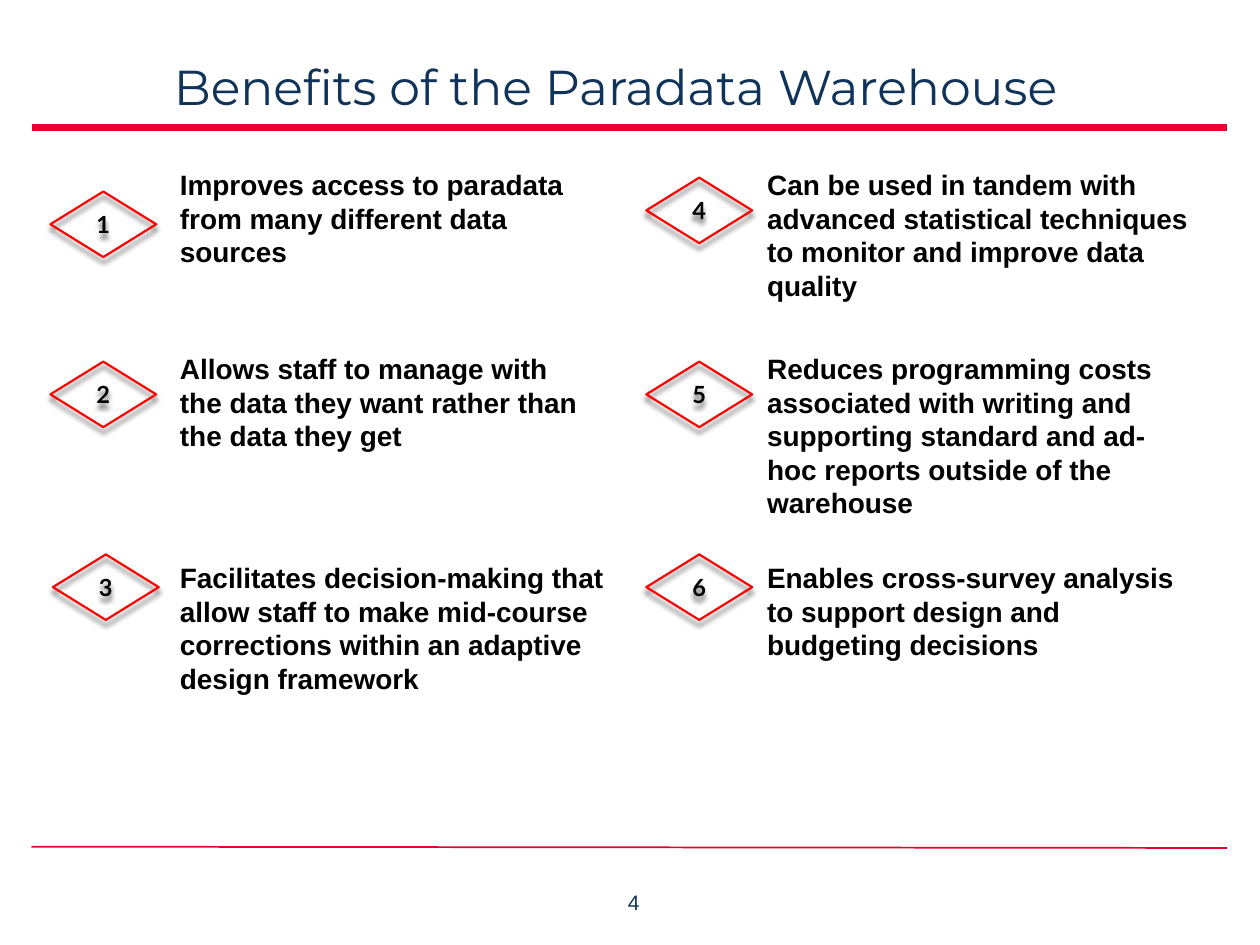
from lxml.etree import SubElement
from pptx import Presentation
from pptx.dml.color import RGBColor
from pptx.enum.shapes import MSO_CONNECTOR, MSO_SHAPE
from pptx.enum.text import MSO_ANCHOR, PP_ALIGN
from pptx.oxml.ns import qn
from pptx.util import Emu, Pt

SCALE = 9144
RED, NAVY, BLACK = "E70033", "10335A", "000000"
TITLE = {"size": Pt(28), "name": "Montserrat", "color": NAVY}
PAGE = {"size": Pt(12), "name": "Arial", "color": NAVY}
BODY = {"size": Pt(16), "name": "Arial", "color": BLACK, "bold": True}
NUMBER = {"size": Pt(13.5), "name": "Lato", "color": BLACK, "bold": True}
ROWS = (128, 274, 440)
COLUMNS = (
    (133, (
        (40, 152, 357, 91, "Improves access to paradata from many different data sources"),
        (40, 287, 339, 91, "Allows staff to manage with the data they want rather than the data they get"),
        (42, 440, 357, 145, "Facilitates decision-making that allow staff to make mid-course "
                            "corrections within an adaptive design framework"),
    )),
    (599, (
        (513, 141, 365, 118, "Can be used in tandem with advanced statistical techniques "
                             "to monitor and improve data quality"),
        (513, 287, 339, 145, "Reduces programming costs associated with writing and supporting "
                             "standard and ad-hoc reports outside of the warehouse"),
        (513, 440, 354, 91, "Enables cross-survey analysis to support design and budgeting decisions"),
    )),
)


def px(*values):
    return [Emu(v * SCALE) for v in values]


def color(value):
    return RGBColor.from_string(value)


class Deck:
    """Holds the style and the current slide, and draws each kind of element."""

    def __init__(self):
        self.prs = Presentation()
        self.prs.slide_width, self.prs.slide_height = px(1000, 750)
        self.s = self.prs.slides.add_slide(self.prs.slide_layouts[6])

    def set_text(self, sp, text, style, align, anchor, wrap=True):
        tf = sp.text_frame
        tf.word_wrap, tf.vertical_anchor = wrap, anchor
        p = tf.paragraphs[0]
        p.alignment = align
        r = p.add_run()
        r.text = text
        for key, value in style.items():
            if key == "color":
                r.font.color.rgb = color(value)
            else:
                setattr(r.font, key, value)

    def text(self, box, text, style, align=PP_ALIGN.LEFT, anchor=MSO_ANCHOR.TOP, wrap=True):
        sp = self.s.shapes.add_textbox(*px(*box))
        self.set_text(sp, text, style, align, anchor, wrap)

    def rule(self, ends, width):
        sp = self.s.shapes.add_connector(MSO_CONNECTOR.STRAIGHT, *px(*ends))
        sp.line.color.rgb, sp.line.width = color(RED), Pt(width)
        SubElement(sp._element.spPr, qn("a:effectLst"))

    def diamond(self, x, y, text):
        sp = self.s.shapes.add_shape(MSO_SHAPE.FLOWCHART_DECISION, *px(x, y, 84, 52))
        sp.fill.background()
        sp.line.color.rgb, sp.line.width = color("FF0000"), Pt(1.25)
        sp.shadow.inherit = False
        effects = sp._element.spPr.find(qn("a:effectLst"))
        shadow = SubElement(effects, qn("a:outerShdw"), blurRad=str(Pt(3)),
                            dist=str(Pt(3)), dir="5400000", rotWithShape="0")
        shade = SubElement(shadow, qn("a:srgbClr"), val=BLACK)
        SubElement(shade, qn("a:alpha"), val="60000")
        self.set_text(sp, text, NUMBER, PP_ALIGN.CENTER, MSO_ANCHOR.MIDDLE)


def main():
    deck = Deck()
    deck.rule((25, 101, 974, 101), 4)
    deck.rule((25, 672, 974, 673), 1)
    deck.text((84, 40, 809, 73), "Benefits of the Paradata Warehouse", TITLE, PP_ALIGN.CENTER)
    number = 0
    for left, items in COLUMNS:
        for top, (x, y, width, height, text) in zip(ROWS, items):
            number += 1
            deck.text((left, top, width, height), text, BODY)
            deck.diamond(x, y, str(number))
    deck.text((453, 697, 100, 38), "4", PAGE, PP_ALIGN.CENTER, MSO_ANCHOR.MIDDLE, False)
    deck.prs.save("out.pptx")


if __name__ == "__main__":
    main()
